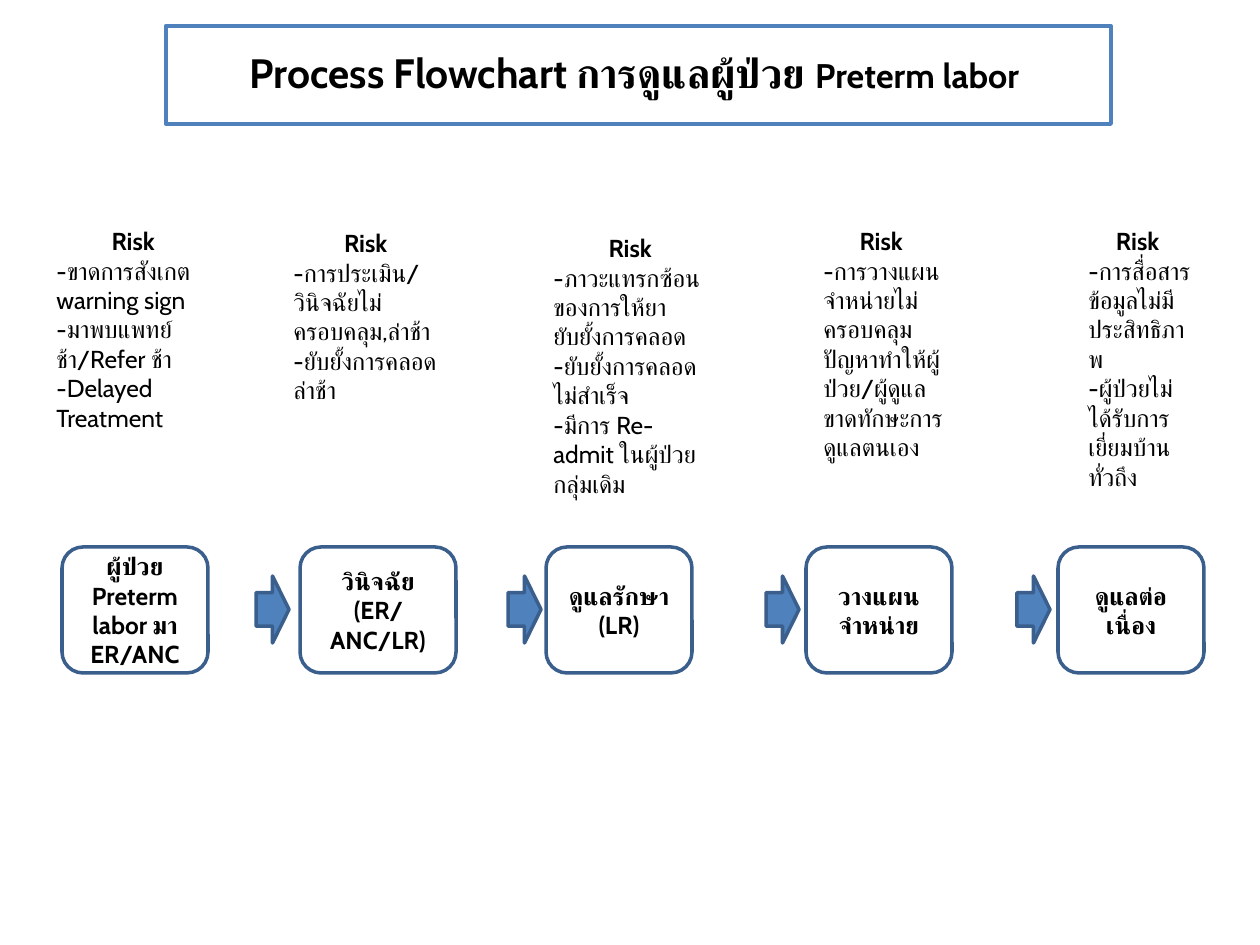
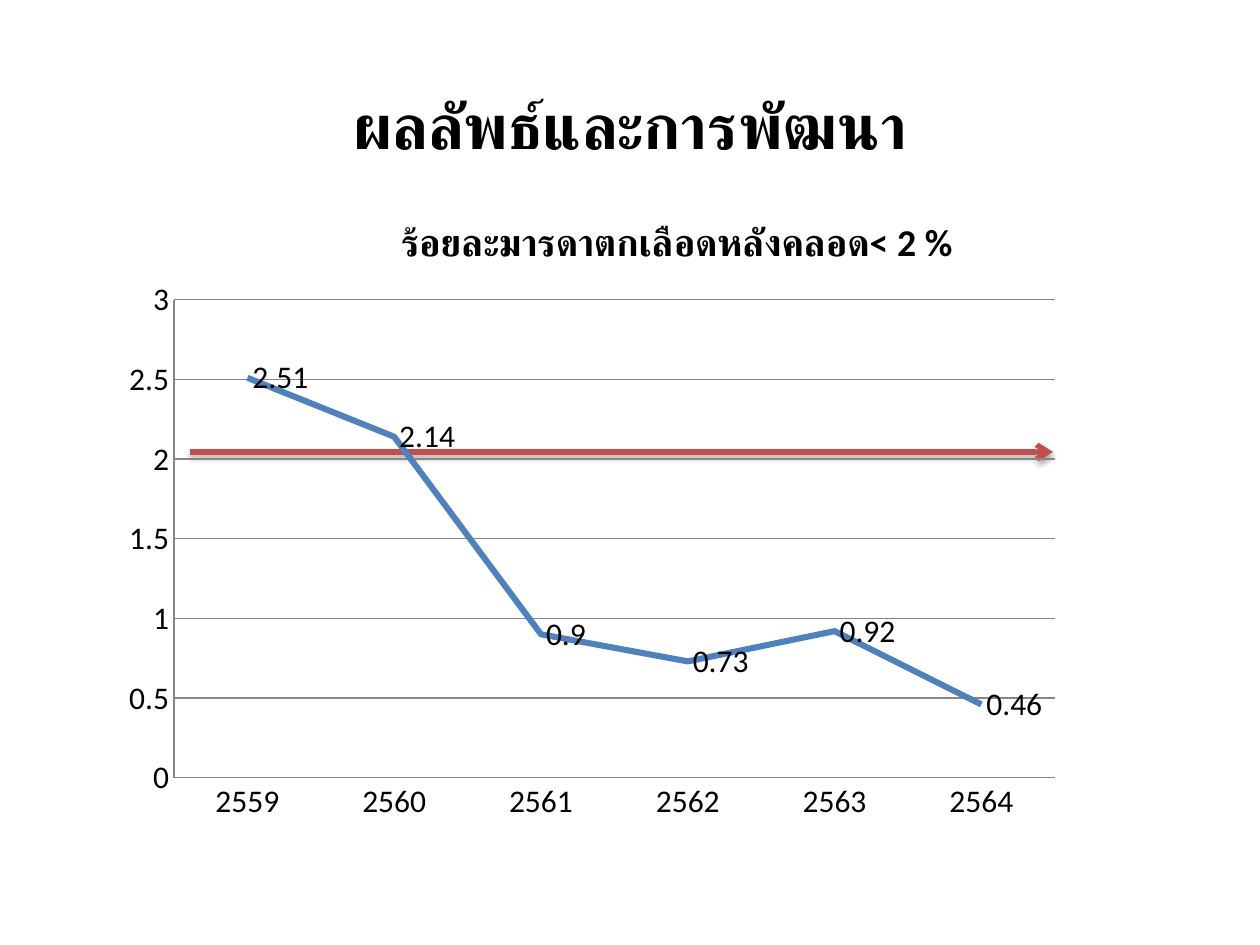
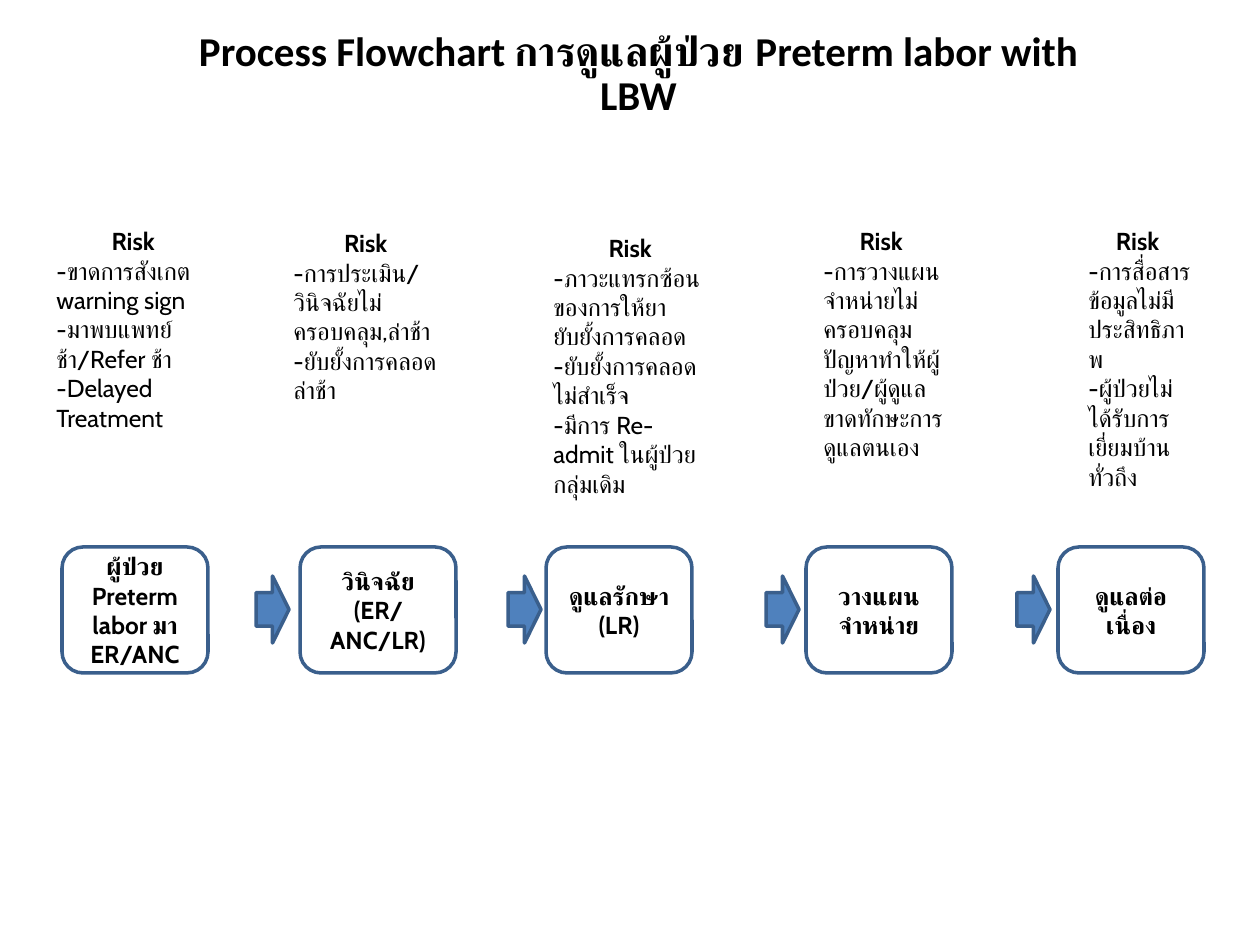
from lxml import etree
from pptx import Presentation
from pptx.chart.data import CategoryChartData
from pptx.dml.color import RGBColor
from pptx.enum.chart import XL_CHART_TYPE, XL_LABEL_POSITION, XL_MARKER_STYLE, XL_TICK_MARK
from pptx.enum.shapes import MSO_CONNECTOR, MSO_SHAPE
from pptx.enum.text import MSO_ANCHOR, MSO_AUTO_SIZE, PP_ALIGN
from pptx.oxml import parse_xml
from pptx.oxml.ns import nsdecls, qn
from pptx.util import Emu, Pt

CENTER = PP_ALIGN.CENTER
LEFT = PP_ALIGN.LEFT
MIDDLE = MSO_ANCHOR.MIDDLE
TOP = MSO_ANCHOR.TOP
RECTANGLE = MSO_SHAPE.RECTANGLE
ROUNDED = MSO_SHAPE.ROUNDED_RECTANGLE
ARROW = MSO_SHAPE.RIGHT_ARROW
NO_TICK = XL_TICK_MARK.NONE

BLACK, BLUE, DARK_BLUE, RED, GRAY = "000000", "4F81BD", "3A5F8C", "C0504D", "868686"
STEP_FONT, PLAIN_FONT = "Cabin", "Calibri"
STEP_SIZE, TITLE_SIZE = 14, 23.4

TITLE_AREA = (166, 26, 945, 98)
STEP_TOP, STEP_HEIGHT = 547, 126
ARROW_TOP, ARROW_WIDTH, ARROW_HEIGHT = 576, 33, 67
RISK_HEADING = "Risk "

STEPS = [
    {"left": 62, "width": 146, "label": ["ผู้ป่วย Preterm labor มา ER/ANC"],
     "risk_area": (44, 220, 184, 280),
     "risks": ["-ขาดการสังเกต warning sign", "-มาพบแพทย์ช้า/Refer ช้า", "-Delayed Treatment"]},
    {"left": 300, "width": 156, "label": ["วินิจฉัย", "(ER/ANC/LR)"],
     "risk_area": (281, 222, 175, 251),
     "risks": ["-การประเมิน/วินิจฉัยไม่ครอบคลุม,ล่าช้า", "-ยับยั้งการคลอดล่าช้า"]},
    {"left": 546, "width": 146, "label": ["ดูแลรักษา", "(LR)"],
     "risk_area": (541, 227, 184, 310),
     "risks": ["-ภาวะแทรกซ้อนของการให้ยายับยั้งการคลอด", "-ยับยั้งการคลอดไม่สำเร็จ",
               "-มีการ Re-admit ในผู้ป่วยกลุ่มเดิม"]},
    {"left": 806, "width": 146, "label": ["วางแผนจำหน่าย"],
     "risk_area": (811, 220, 146, 310),
     "risks": ["-การวางแผนจำหน่ายไม่ครอบคลุม", "ปัญหาทำให้ผู้ป่วย/ผู้ดูแลขาดทักษะการดูแลตนเอง"]},
    {"left": 1058, "width": 146, "label": ["ดูแลต่อเนื่อง"],
     "risk_area": (1076, 220, 129, 310),
     "risks": ["-การสื่อสารข้อมูลไม่มีประสิทธิภาพ", "-ผู้ป่วยไม่ได้รับการเยี่ยมบ้านทั่วถึง"]},
]
ARROW_LEFTS = [256, 508, 766, 1017]

PRETERM_TITLE = [("Process Flowchart การดูแลผู้ป่วย", TITLE_SIZE), (" Preterm labor ", 19.5)]
LBW_TITLE = [("Process Flowchart การดูแลผู้ป่วย Preterm labor with LBW", TITLE_SIZE)]

RESULT_TITLE = "ผลลัพธ์และการพัฒนา"
RESULT_TITLE_AREA = (87, 50, 1086, 149)
CHART_TITLE = "ร้อยละมารดาตกเลือดหลังคลอด< 2 %"
CHART_AREA = (64, 195, 1101, 655)
RATES = {"2559": 2.51, "2560": 2.14, "2561": 0.9, "2562": 0.73, "2563": 0.92, "2564": 0.46}
TARGET_LINE = (190, 452, 1053, 452)
PLOT_LAYOUT = {"x": 0.1, "y": 0.16, "w": 0.8, "h": 0.73}
TITLE_LAYOUT = {"x": 0.3, "y": 0.02}


def px(*lengths):
    return [Emu(round(length * 914400 / 126)) for length in lengths]


def color(value):
    return RGBColor.from_string(value)


def set_line(line, value, width):
    line.color.rgb = color(value)
    line.width = Pt(width)


def set_font(font, name, size, bold=False):
    font.name = name
    font.size = Pt(size)
    font.bold = bold
    font.color.rgb = color(BLACK)


def add_outline(page, kind, area, line, width, fill=None):
    box = page.shapes.add_shape(kind, *px(*area))
    box.shadow.inherit = False
    if fill:
        box.fill.solid()
        box.fill.fore_color.rgb = color(fill)
    else:
        box.fill.background()
    set_line(box.line, line, width)
    return box


def write(box, rows, font, anchor=MIDDLE):
    frame = box.text_frame
    frame.word_wrap = True
    frame.vertical_anchor = anchor
    frame.text = "\n".join(text for text, size, bold, align in rows)
    for para, (text, size, bold, align) in zip(frame.paragraphs, rows):
        para.alignment = align
        for span in para.runs:
            set_font(span.font, font, size, bold)


def add_flow_title(page, spans, font, framed):
    if framed:
        box = add_outline(page, RECTANGLE, TITLE_AREA, BLUE, 2.25)
    else:
        box = page.shapes.add_textbox(*px(*TITLE_AREA))
    box.text_frame.word_wrap = True
    box.text_frame.vertical_anchor = MIDDLE
    para = box.text_frame.paragraphs[0]
    para.alignment = CENTER
    para.line_spacing = 0.9
    for text, size in spans:
        span = para.add_run()
        span.text = text
        set_font(span.font, font, size, True)


def add_flow_page(deck, title, font, framed):
    page = deck.slides.add_slide(deck.slide_layouts[6])
    add_flow_title(page, title, font, framed)
    for step in STEPS:
        area = (step["left"], STEP_TOP, step["width"], STEP_HEIGHT)
        box = add_outline(page, ROUNDED, area, DARK_BLUE, 2)
        write(box, [(text, STEP_SIZE, True, CENTER) for text in step["label"]], STEP_FONT)
        risk_box = page.shapes.add_textbox(*px(*step["risk_area"]))
        rows = [(RISK_HEADING, STEP_SIZE, True, CENTER)]
        rows += [(risk, STEP_SIZE, False, LEFT) for risk in step["risks"]]
        write(risk_box, rows, STEP_FONT, TOP)
        risk_box.text_frame.auto_size = MSO_AUTO_SIZE.SHAPE_TO_FIT_TEXT
    for left in ARROW_LEFTS:
        area = (left, ARROW_TOP, ARROW_WIDTH, ARROW_HEIGHT)
        add_outline(page, ARROW, area, DARK_BLUE, 2, BLUE)


def add_target_line(page):
    target = page.shapes.add_connector(MSO_CONNECTOR.STRAIGHT, *px(*TARGET_LINE))
    set_line(target.line, RED, 3)
    etree.SubElement(target.line._get_or_add_ln(), qn("a:tailEnd"), type="arrow")
    target._element.spPr.append(parse_xml(
        f'<a:effectLst {nsdecls("a")}><a:outerShdw blurRad="39370" dist="22860" dir="5400000" '
        f'rotWithShape="0"><a:srgbClr val="{BLACK}"><a:alpha val="35000"/></a:srgbClr>'
        '</a:outerShdw></a:effectLst>'))


def chart_layout(places, inner=False):
    target = '<c:layoutTarget val="inner"/>' if inner else ""
    modes = "".join(f'<c:{key}Mode val="edge"/>' for key in "xy")
    values = "".join(f'<c:{key} val="{value}"/>' for key, value in places.items())
    return parse_xml(f'<c:layout {nsdecls("c")}><c:manualLayout>{target}{modes}{values}'
                     '</c:manualLayout></c:layout>')


def clear_fill():
    return parse_xml(f'<c:spPr {nsdecls("c", "a")}><a:noFill/><a:ln><a:noFill/></a:ln></c:spPr>')


def place(element, layout):
    for old in element.findall(qn("c:layout")):
        element.remove(old)
    text = element.find(qn("c:tx"))
    if text is None:
        element.insert(0, layout)
    else:
        text.addnext(layout)


def add_rate_chart(page):
    data = CategoryChartData()
    data.categories = list(RATES)
    data.add_series(CHART_TITLE, list(RATES.values()))
    chart = page.shapes.add_chart(XL_CHART_TYPE.LINE, *px(*CHART_AREA), data).chart
    set_font(chart.font, PLAIN_FONT, 18)
    chart.has_legend = False
    chart.has_title = True
    heading = chart.chart_title.text_frame
    heading.text = CHART_TITLE
    set_font(heading.paragraphs[0].runs[0].font, PLAIN_FONT, 21.6, True)
    for axis in (chart.category_axis, chart.value_axis):
        axis.major_tick_mark = axis.minor_tick_mark = NO_TICK
        set_line(axis.format.line, GRAY, 0.75)
    scale = chart.value_axis
    scale.minimum_scale, scale.maximum_scale, scale.major_unit = 0, 3, 0.5
    scale.has_major_gridlines = True
    set_line(scale.major_gridlines.format.line, GRAY, 0.75)

    plot = chart.plots[0]
    plot.vary_by_categories = False
    series = plot.series[0]
    series.smooth = False
    series.marker.style = XL_MARKER_STYLE.NONE
    set_line(series.format.line, BLUE, 3.5)
    labels = series.data_labels
    labels.show_value = True
    labels.position = XL_LABEL_POSITION.RIGHT
    set_font(labels.font, PLAIN_FONT, 18)

    root = chart._chartSpace
    plot_area = root.chart.plotArea
    place(plot_area, chart_layout(PLOT_LAYOUT, inner=True))
    place(chart.chart_title._element, chart_layout(TITLE_LAYOUT))
    plot_area.append(clear_fill())
    root.chart.addnext(clear_fill())


def add_result_page(deck):
    page = deck.slides.add_slide(deck.slide_layouts[6])
    add_target_line(page)
    box = page.shapes.add_textbox(*px(*RESULT_TITLE_AREA))
    write(box, [(RESULT_TITLE, 36, True, CENTER)], PLAIN_FONT)
    add_rate_chart(page)


def main():
    deck = Presentation()
    deck.slide_width, deck.slide_height = px(1260, 945)
    add_flow_page(deck, PRETERM_TITLE, STEP_FONT, True)
    add_result_page(deck)
    add_flow_page(deck, LBW_TITLE, PLAIN_FONT, False)
    deck.save("out.pptx")


if __name__ == "__main__":
    main()
